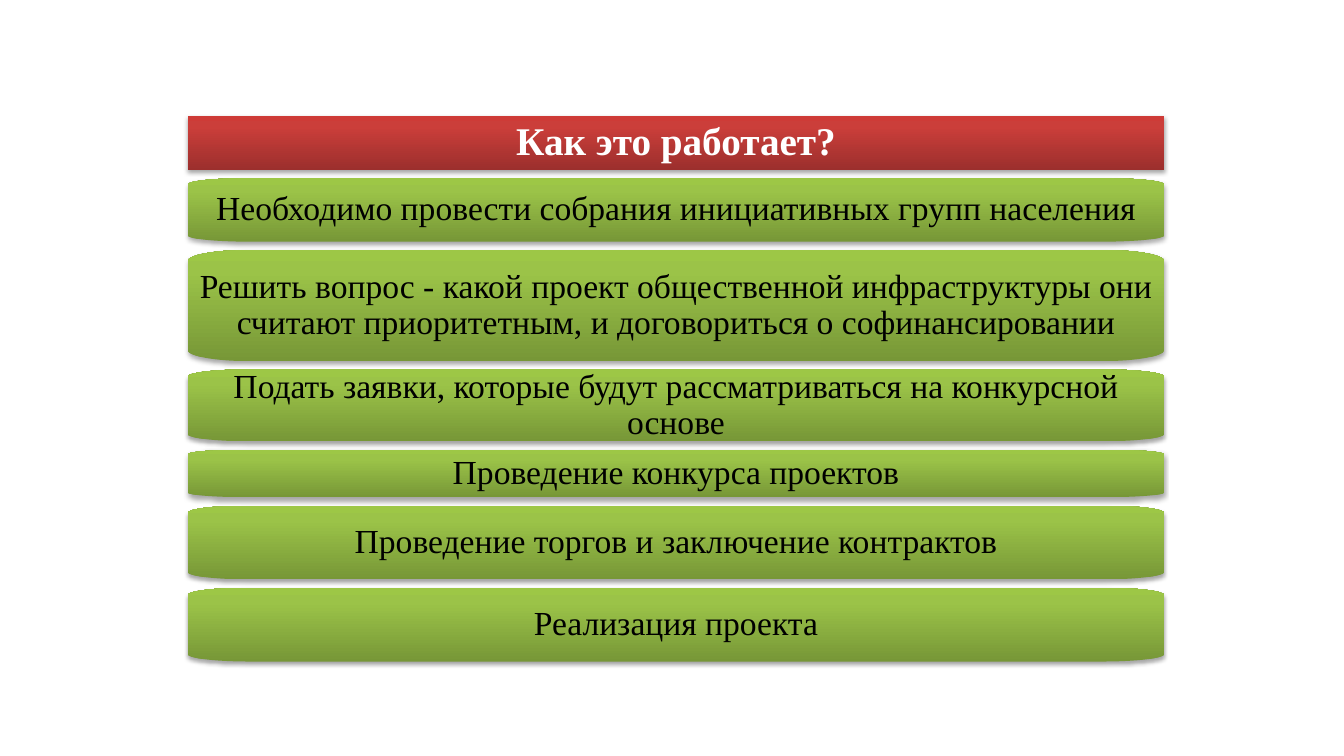
from copy import deepcopy

from pptx import Presentation
from pptx import util as u
from pptx.dml.color import RGBColor
from pptx.enum import text
from pptx.oxml import parse_xml
from pptx.oxml.ns import nsdecls, qn

TITLE = "Как это работает?"
TITLE_HEIGHT = 1.36
STEPS = [  # wording, bar height in cm
    ("Необходимо провести собрания инициативных групп населения", 1.6),
    ("Решить вопрос - какой проект общественной инфраструктуры они "
     "считают приоритетным, и договориться о софинансировании", 2.8),
    ("Подать заявки, которые будут рассматриваться на конкурсной основе", 1.81),
    ("Проведение конкурса проектов", 1.2),
    ("Проведение торгов и заключение контрактов", 1.86),
    ("Реализация проекта", 1.86),
]

THEME = {
    "font": "Times New Roman",
    "title": {"size": 28, "bold": True, "color": "FFFFFF", "inset": (0.15, 0.13),
              "corner": 1.24, "stops": ((0, "9C2F2D"), (0.8, "CB3E3A"), (1, "CE3B37"))},
    "step": {"size": 24, "bold": False, "color": "000000", "inset": (0.1, 0.08),
             "corner": 1.54, "stops": ((0, "779737"), (0.8, "9BC348"), (1, "9DC746"))},
}
LEFT, TOP, WIDTH, GAP = 4.73, 2.92, 24.61, 0.21
ROUNDNESS = 0.55  # how far a curve's handles reach towards the corner

SHADOW = (
    f'<a:effectLst {nsdecls("a")}><a:outerShdw blurRad="40000" dist="23000" dir="5400000" '
    'rotWithShape="0"><a:srgbClr val="000000"><a:alpha val="35000"/></a:srgbClr>'
    '</a:outerShdw></a:effectLst>'
)


def bar_outline(top, height, rx):
    """Corner ends, clockwise; corners are rx wide and a tenth of the height tall."""
    ry, right, bottom = height / 10, LEFT + WIDTH, top + height
    ends = [(LEFT, top + ry), (LEFT + rx, top), (right - rx, top), (right, top + ry),
            (right, bottom - ry), (right - rx, bottom), (LEFT + rx, bottom),
            (LEFT, bottom - ry)]
    return [(u.Cm(x), u.Cm(y)) for x, y in ends]


def round_corners(sp):
    """Turn every second segment, which cuts a corner, into a curve."""
    path = sp._element.spPr.find(".//" + qn("a:path"))
    ends = [(int(pt.get("x")), int(pt.get("y"))) for pt in path.iter(qn("a:pt"))]
    cuts = path.findall(qn("a:lnTo"))
    for i in range(0, len(cuts), 2):
        a, b = ends[i], ends[i + 1]
        corner = (b[0], a[1]) if i % 4 else (a[0], b[1])
        handles = [[round(e + (c - e) * ROUNDNESS) for e, c in zip(end, corner)]
                   for end in (a, b)]
        pts = "".join(f'<a:pt x="{x}" y="{y}"/>' for x, y in (*handles, b))
        path.replace(cuts[i], parse_xml(
            f'<a:cubicBezTo {nsdecls("a")}>{pts}</a:cubicBezTo>'))


def paint(sp, stops):
    sp.line.fill.background()
    sp.fill.gradient()
    sp.fill.gradient_angle = 90
    spPr = sp._element.spPr
    gradient = spPr.find(".//" + qn("a:gsLst"))
    gradient.append(deepcopy(gradient[-1]))
    for stop, (position, color) in zip(sp.fill.gradient_stops, stops):
        stop.position = position
        stop.color.rgb = RGBColor.from_string(color)
    spPr.append(parse_xml(SHADOW))


def add_bar(s, top, height, style):
    points = bar_outline(top, height, style["corner"])
    builder = s.shapes.build_freeform(*points[0])
    builder.add_line_segments(points[1:], close=True)
    sp = builder.convert_to_shape()
    round_corners(sp)
    paint(sp, style["stops"])
    return sp


def write(sp, wording, style):
    tf = sp.text_frame
    across, down = map(u.Cm, style["inset"])
    frame = {"word_wrap": True, "auto_size": text.MSO_AUTO_SIZE.NONE,
             "vertical_anchor": text.MSO_ANCHOR.MIDDLE,
             "margin_left": across, "margin_right": across,
             "margin_top": down, "margin_bottom": down}
    for name, value in frame.items():
        setattr(tf, name, value)
    p = tf.paragraphs[0]
    p.alignment, p.line_spacing = text.PP_ALIGN.CENTER, 0.9
    r = p.add_run()
    r.text = wording
    font = {"name": THEME["font"], "size": u.Pt(style["size"]), "bold": style["bold"]}
    for name, value in font.items():
        setattr(r.font, name, value)
    r.font.color.rgb = RGBColor.from_string(style["color"])


def shape_title(s):
    """Give the title placeholder the place, outline and paint of a bar."""
    title = s.shapes.title
    bar = add_bar(s, TOP, TITLE_HEIGHT, THEME["title"])._element
    title._element.replace(title._element.spPr, bar.spPr)
    bar.getparent().remove(bar)
    write(title, TITLE, THEME["title"])


def main():
    prs = Presentation()
    prs.slide_width, prs.slide_height = u.Cm(33.87), u.Cm(19.05)
    s = prs.slides.add_slide(prs.slide_layouts[5])
    shape_title(s)

    top = TOP + TITLE_HEIGHT + GAP
    for wording, height in STEPS:
        write(add_bar(s, top, height, THEME["step"]), wording, THEME["step"])
        top += height + GAP

    prs.save("out.pptx")


if __name__ == "__main__":
    main()
